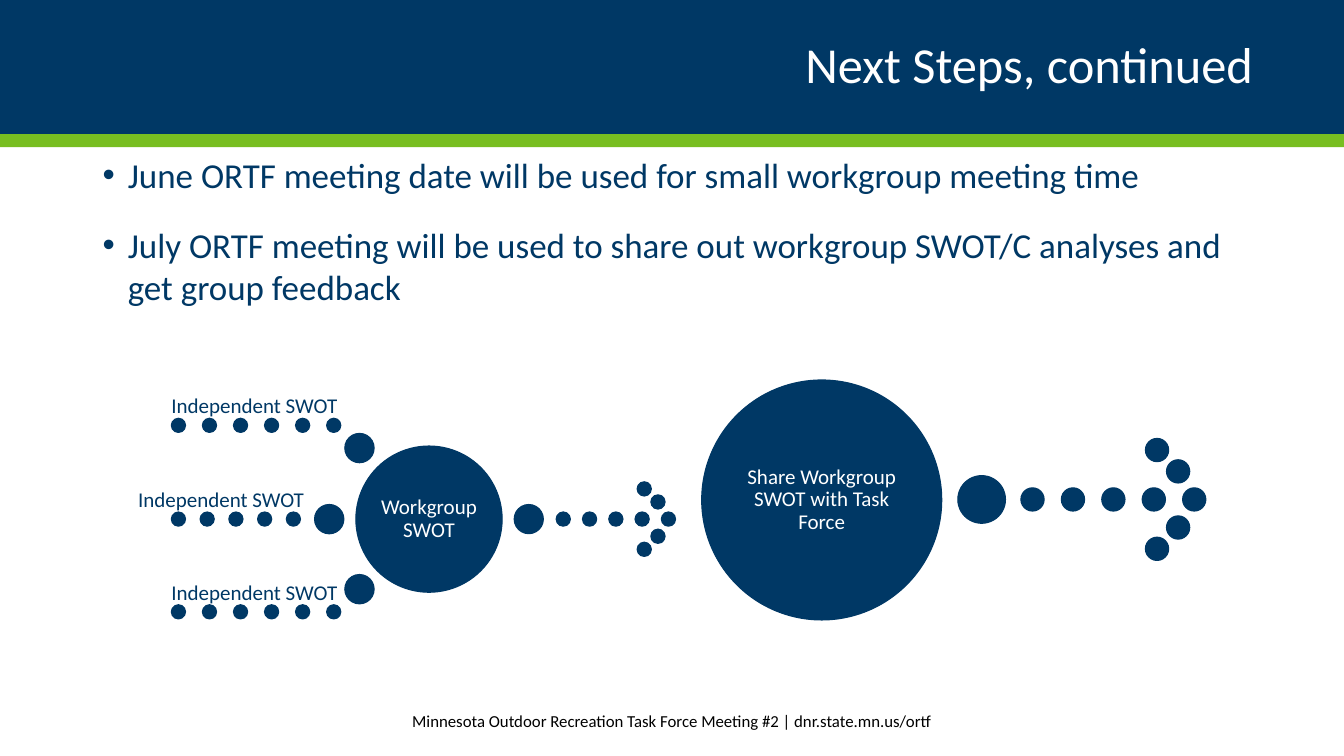
from pptx import Presentation
from pptx.dml.color import RGBColor
from pptx.enum import shapes, text
from pptx.oxml import parse_xml
from pptx.oxml.ns import nsdecls
from pptx.util import Inches, Pt

NAVY, GREEN, WHITE, BLACK = "003865", "78BE21", "FFFFFF", "000000"
SHAPE, ANCHOR, ALIGN = shapes.MSO_SHAPE, text.MSO_ANCHOR, text.PP_ALIGN


def color(value):
    return RGBColor.from_string(value)


def add_shape(slide, kind, box, fill, line=False):
    sp = slide.shapes.add_shape(kind, *map(Inches, box))
    sp.shadow.inherit = False
    sp.fill.solid()
    sp.fill.fore_color.rgb = color(fill)
    if line:
        sp.line.color.rgb = color(fill)
        sp.line.width = Pt(0.85)
    else:
        sp.line.fill.background()
    return sp


def add_circle(slide, x, y, d):
    """Place a circle of diameter d, centred on x, y."""
    return add_shape(slide, SHAPE.OVAL, (x - d / 2, y - d / 2, d, d), NAVY, line=True)


def write(sp, lines, size, ink, align=ALIGN.LEFT, anchor=ANCHOR.TOP,
          insets=(0.1, 0.05), spacing=1.0):
    tf = sp.text_frame
    tf.word_wrap = True
    tf.vertical_anchor = anchor
    tf.margin_left = tf.margin_right = Inches(insets[0])
    tf.margin_top = tf.margin_bottom = Inches(insets[1])
    for i, line in enumerate(lines):
        p = tf.add_paragraph() if i else tf.paragraphs[0]
        p.text = line
        p.alignment = align
        p.line_spacing = spacing
        p.font.name = "Calibri"
        p.font.size = Pt(size)
        p.font.color.rgb = color(ink)
    return tf


def add_text(slide, box, lines, size, ink, **style):
    return write(slide.shapes.add_textbox(*map(Inches, box)), lines, size, ink, **style)


def add_header(slide, box, title):
    left, top, width, height = box
    add_shape(slide, SHAPE.RECTANGLE, (left, top + height, width, 0.13), GREEN)
    band = add_shape(slide, SHAPE.RECTANGLE, box, NAVY)
    write(band, [title], 36, WHITE, align=ALIGN.RIGHT, anchor=ANCHOR.MIDDLE,
          insets=(0.9, 0.05), spacing=0.9)


def add_bullets(slide, box, lines):
    tf = add_text(slide, box, lines, 25, NAVY)
    for p in tf.paragraphs:
        p.space_before = p.space_after = Pt(10)
        pPr = p._p.get_or_add_pPr()
        pPr.set("marL", str(Inches(0.25)))
        pPr.set("indent", str(-Inches(0.25)))
        for xml in (f'<a:buClr {nsdecls("a")}><a:srgbClr val="{NAVY}"/></a:buClr>',
                    f'<a:buFont {nsdecls("a")} typeface="Arial"/>',
                    f'<a:buChar {nsdecls("a")} char="•"/>'):
            pPr.insert_element_before(parse_xml(xml), "a:tabLst", "a:defRPr", "a:extLst")


def add_input(slide, box, label_left, count, pitch, end):
    """Label above a row of dots along the box's bottom, with a larger dot at end."""
    left, top, width, height = box
    d = 0.14
    for i in range(count):
        add_circle(slide, left + d / 2 + i * pitch, top + height + d / 2, d)
    add_circle(slide, *end, 0.29)
    add_text(slide, (label_left, top, width, height), ["Independent SWOT"], 15, NAVY,
             anchor=ANCHOR.BOTTOM, insets=(0, 0), spacing=0.9)


def add_stage(slide, x, y, d, label):
    write(add_circle(slide, x, y, d), [label], 15, WHITE, align=ALIGN.CENTER,
          anchor=ANCHOR.MIDDLE, insets=(0.02, 0.02), spacing=0.9)


def add_dotted_arrow(slide, box):
    left, top, width, height = box
    middle = top + height / 2
    tail, d = 0.39 * height, 0.19 * height
    tip = left + width - d / 2
    add_circle(slide, left + tail / 2, middle, tail)
    for i in range(5):
        add_circle(slide, tip - i * 0.163 * width, middle, d)
    for back, rise in ((0.15, 0.405), (0.065, 0.23)):
        for side in (-1, 1):
            add_circle(slide, tip - back * width, middle + side * rise * height, d)


def add_process(slide, left, top):
    """Three inputs feed the workgroup stage, which feeds the task force stage."""
    middle = top + 1.38
    for y, label_dx, count, pitch, end in (
            (0, 0, 6, 0.308, (1.865, 0.675)),
            (0.93, -0.33, 5, 0.285, (1.565, 1.38)),
            (1.85, 0, 6, 0.308, (1.865, 2.075))):
        add_input(slide, (left, top + y, 1.68, 0.38), left + label_dx, count, pitch,
                  (left + end[0], top + end[1]))
    add_stage(slide, left + 2.555, middle, 1.45, "Workgroup SWOT")
    add_dotted_arrow(slide, (left + 3.4, middle - 0.37, 1.6, 0.74))
    add_stage(slide, left + 6.45, top + 1.19, 2.38, "Share Workgroup SWOT with Task Force")
    add_dotted_arrow(slide, (left + 7.8, top + 0.58, 2.46, 1.21))


def main():
    prs = Presentation()
    prs.slide_width, prs.slide_height = Inches(13.33), Inches(7.5)
    slide = prs.slides.add_slide(prs.slide_layouts[6])
    add_header(slide, (0, 0, 13.33, 1.33), "Next Steps, continued")
    add_bullets(slide, (0.92, 1.47, 11.5, 4.76), [
        "June ORTF meeting date will be used for small workgroup meeting time",
        "July ORTF meeting will be used to share out workgroup SWOT/C analyses "
        "and get group feedback"])
    add_process(slide, 1.7, 3.77)
    add_text(slide, (3.61, 6.95, 6.11, 0.4),
             ["Minnesota Outdoor Recreation Task Force Meeting #2 | dnr.state.mn.us/ortf"],
             12, BLACK, align=ALIGN.CENTER, anchor=ANCHOR.MIDDLE)
    prs.save("out.pptx")


if __name__ == "__main__":
    main()
